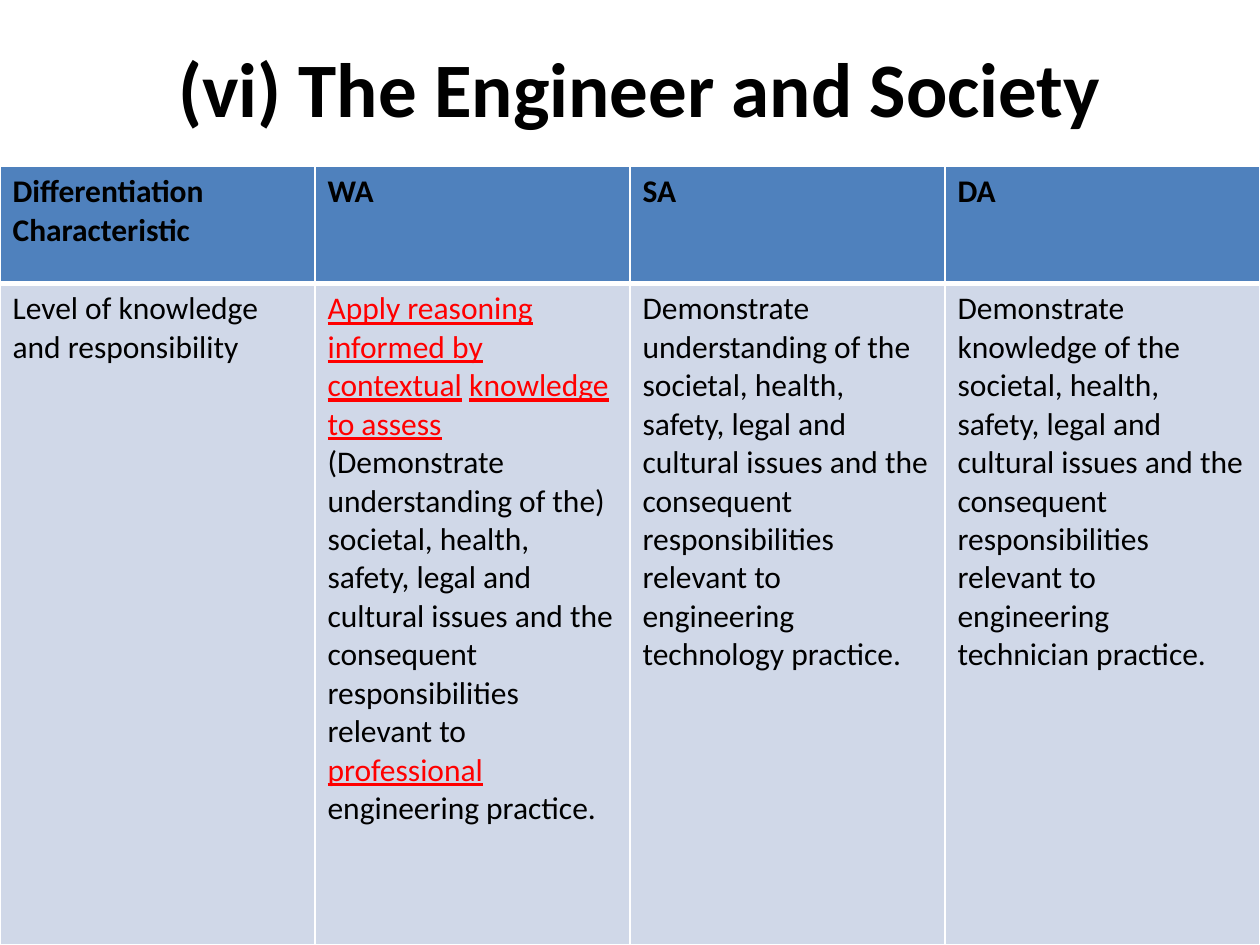
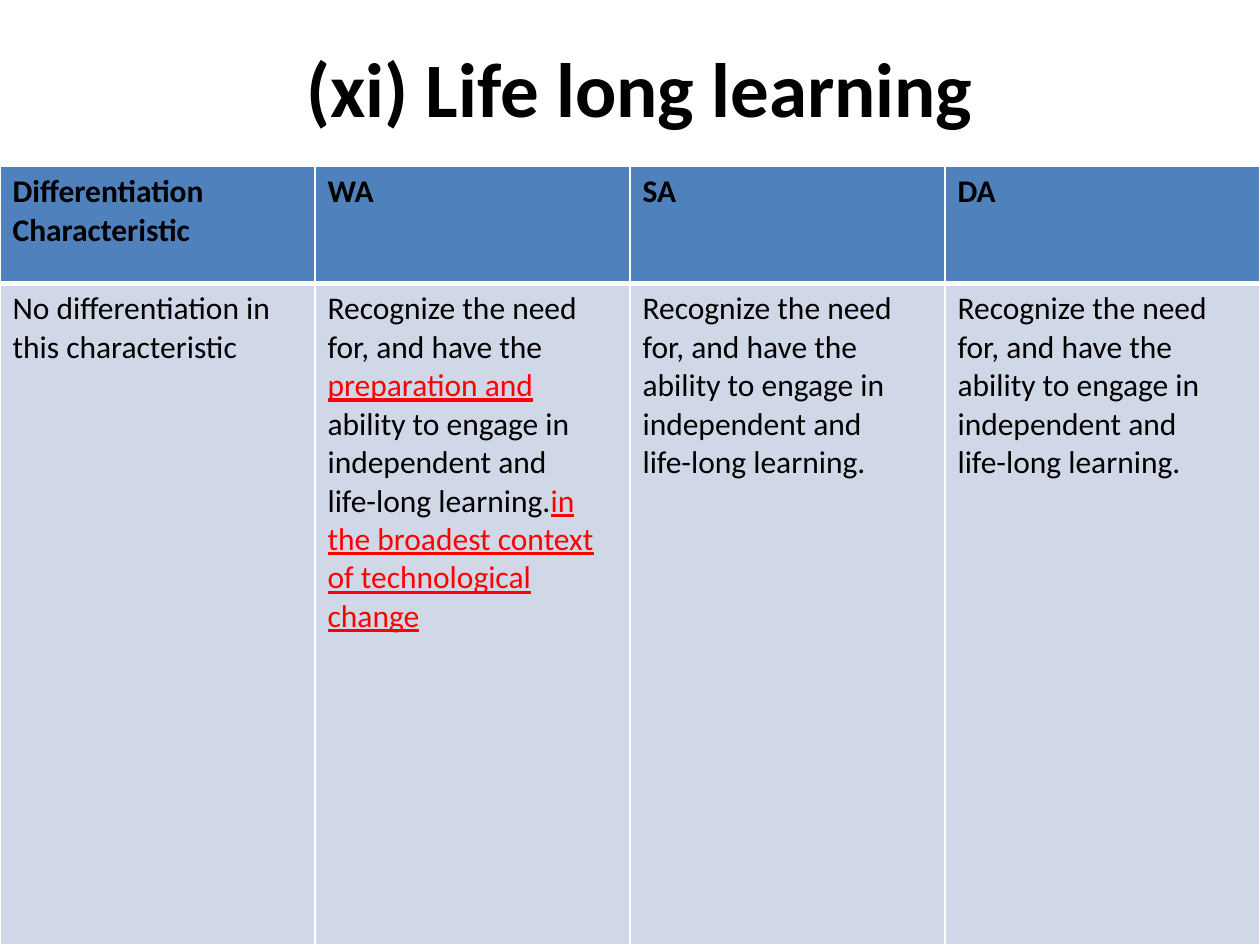
from lxml import etree
from pptx import Presentation
from pptx import util as u
from pptx.dml import color
from pptx.enum import text
from pptx.oxml import ns

Pt = u.Pt
FONT = "Calibri"
HUES = {"ink": "000000", "mark": "FF0000", "head": "4F81BD",
        "body": "D0D8E8", "rule": "FFFFFF"}
PAGE = (720, 540)
TITLE = (23.76, 16.56, 684, 66.24)
GRID = (0, 95.04, 720, 444.96)
HEAD = 66.96
THIN, THICK = 1, 3
HEADS = ["Differentiation Characteristic", "WA", "SA", "DA"]

# Asterisks enclose marked wording; line breaks separate paragraphs.
LEARN = ("Recognize the need for, and have the\n"
         "ability to engage in independent and\n"
         "life-long learning.")
SLIDES = [
    ("(vi) The Engineer and Society", [
        "Level of knowledge\nand responsibility",
        "*Apply reasoning informed by contextual* *knowledge to assess* "
        "(Demonstrate understanding of the) societal, health, safety, legal "
        "and cultural issues and the consequent responsibilities relevant to "
        "*professional *engineering practice.",
        "Demonstrate understanding of the societal, health, safety, legal "
        "and cultural issues and the consequent\n"
        "responsibilities relevant to engineering\n"
        "technology practice.",
        "Demonstrate knowledge of the\n"
        "societal, health, safety, legal and\n"
        "cultural issues and the consequent\n"
        "responsibilities relevant to\n"
        "engineering technician practice."]),
    ("(xi) Life long learning", [
        "No differentiation in\nthis characteristic",
        "Recognize the need for, and have the *preparation and*\n"
        "ability to engage in independent and\n"
        "life-long learning.*in the broadest context of technological change*",
        LEARN,
        LEARN]),
]


def hue(name):
    return color.RGBColor.from_string(HUES[name])


def write(frame, words, size, bold=False, align=None):
    for i, line in enumerate(words.split("\n")):
        para = frame.add_paragraph() if i else frame.paragraphs[0]
        para.alignment = align
        for j, part in enumerate(line.split("*")):
            if not part:
                continue
            run = para.add_run()
            run.text = part
            font = run.font
            font.name, font.size, font.bold = FONT, Pt(size), bold
            marked = j % 2 == 1
            font.underline = marked
            font.color.rgb = hue("mark" if marked else "ink")


def edge(cell, side, width):
    props = cell._tc.get_or_add_tcPr()
    line = etree.SubElement(props, ns.qn("a:ln" + side), w=str(Pt(width)))
    fill = etree.SubElement(line, ns.qn("a:solidFill"))
    etree.SubElement(fill, ns.qn("a:srgbClr"), val=HUES["rule"])


def title(slide, box, words):
    frame = slide.shapes.add_textbox(*map(Pt, box)).text_frame
    frame.word_wrap = True
    frame.vertical_anchor = text.MSO_ANCHOR.MIDDLE
    write(frame, words, 44, True, text.PP_ALIGN.CENTER)


def grid(slide, box, rows):
    wide, high = box[2:]
    count = len(HEADS)
    table = slide.shapes.add_table(len(rows), count, *map(Pt, box)).table
    for col in table.columns:
        col.width = Pt(wide / count)
    for row, tall in zip(table.rows, (HEAD, high - HEAD)):
        row.height = Pt(tall)
    for i, row in enumerate(rows):
        top = i == 0
        for j, words in enumerate(row):
            cell = table.cell(i, j)
            for side in "LRTB":
                shared = side == ("B" if top else "T")
                edge(cell, side, THICK if shared else THIN)
            cell.fill.solid()
            cell.fill.fore_color.rgb = hue("head" if top else "body")
            write(cell.text_frame, words, 18, top)


def main():
    deck = Presentation()
    deck.slide_width, deck.slide_height = map(Pt, PAGE)
    for name, body in SLIDES:
        slide = deck.slides.add_slide(deck.slide_layouts[6])
        title(slide, TITLE, name)
        grid(slide, GRID, [HEADS, body])
    deck.save("out.pptx")


if __name__ == "__main__":
    main()
